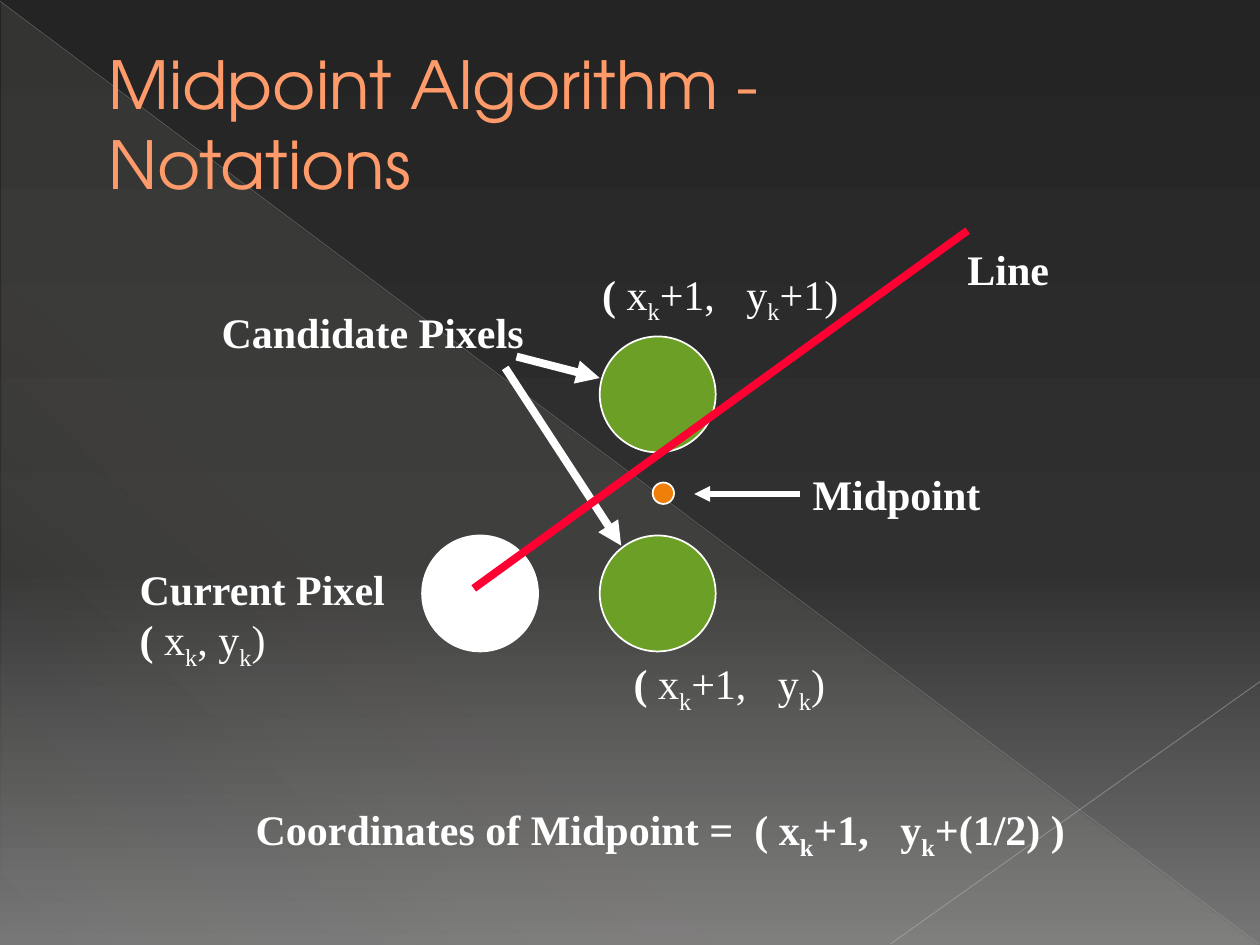
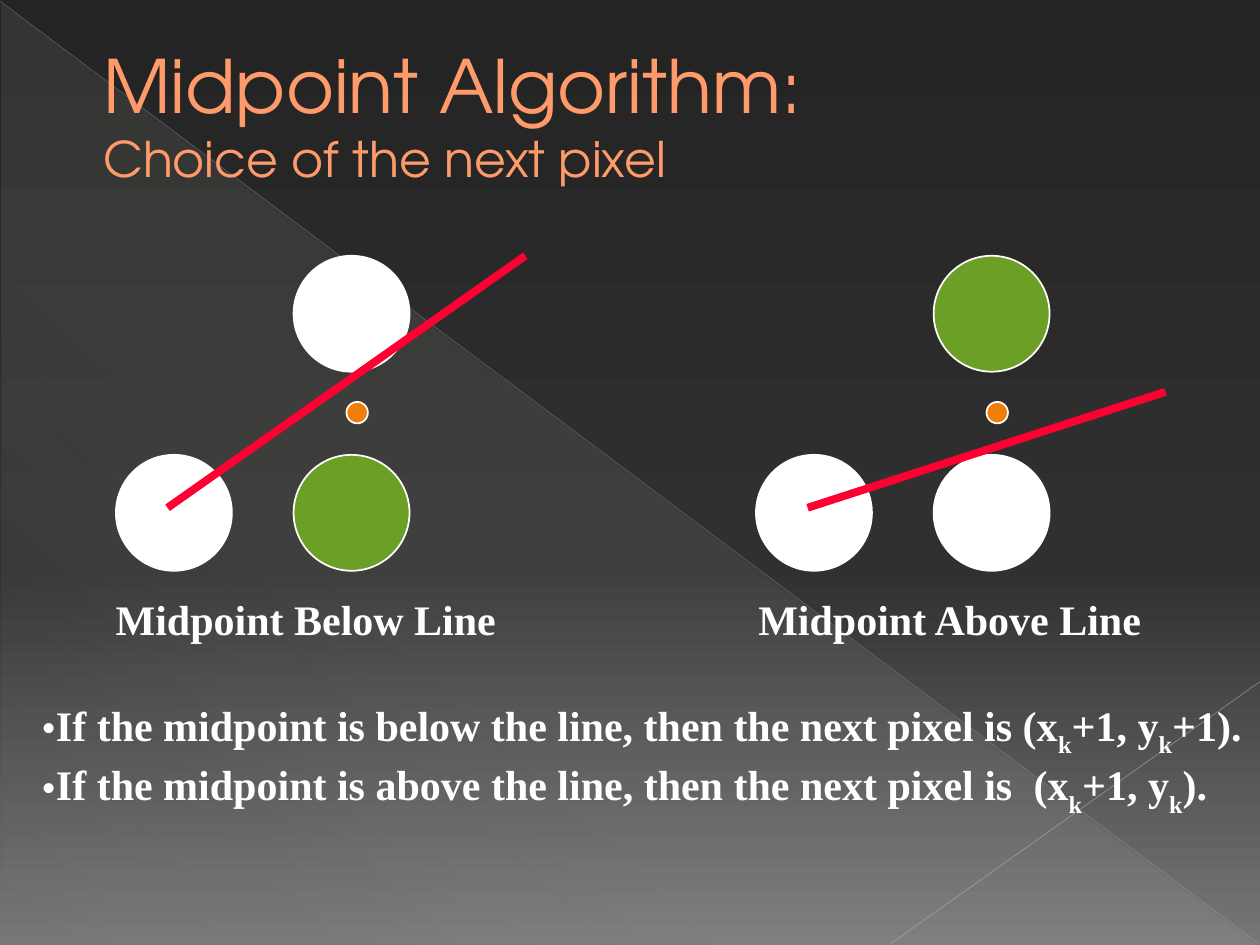
from dataclasses import dataclass
from typing import NamedTuple

from lxml import etree
from pptx import Presentation
from pptx import util as u
from pptx.dml.color import RGBColor
from pptx.enum import shapes, text
from pptx.oxml.ns import qn

WHITE, GREEN, ORANGE, RED = "FFFFFF", "6B9F25", "F07F09", "FF0033"
TITLE_COLOUR, TITLE_OUTLINE = "FF9B6A", "A65806"
BODY_FONT, TITLE_FONT = "Times New Roman", "TeX Gyre Adventor"
PIXEL_SIZE, MIDPOINT_SIZE = 0.92, 0.17
COLUMN_STEP, ROW_STEP = 1.41, 1.58


class Span(NamedTuple):
    text: str
    bold: bool = True
    size: float = 0
    gap: float = 0


class Label(NamedTuple):
    left: float
    top: float
    width: float
    height: float
    paragraphs: list


class Stroke(NamedTuple):
    start: tuple
    end: tuple
    colour: str
    width: float
    arrow: bool = False
    opacity: int = 100


class Stop(NamedTuple):
    position: int
    colour: str
    opacity: int = 100


@dataclass
class PixelDiagram:
    left: float
    top: float
    upper: str
    lower: str
    run: float
    rise: float


def colour(value: str) -> RGBColor:
    return RGBColor.from_string(value)


def add_xml(parent, tag: str, **attributes):
    names = {key: str(value) for key, value in attributes.items()}
    return etree.SubElement(parent, qn(tag), names)


def set_gradient(fill, element, stops: list, angle: int) -> None:
    fill.gradient()
    gradient = next(element.iter(qn("a:gradFill")))
    for child in list(gradient):
        gradient.remove(child)
    stop_list = add_xml(gradient, "a:gsLst")
    for stop in stops:
        mark = add_xml(stop_list, "a:gs", pos=stop.position * 1000)
        tint = add_xml(mark, "a:srgbClr", val=stop.colour)
        if stop.opacity < 100:
            add_xml(tint, "a:alpha", val=stop.opacity * 1000)
    add_xml(gradient, "a:lin", ang=angle * 60000, scaled=0)


def write(frame, paragraphs: list, *, font: str = BODY_FONT, size: float = 24,
          fill: str = WHITE, subscript: int = -25) -> None:
    for index, spans in enumerate(paragraphs):
        para = frame.add_paragraph() if index else frame.paragraphs[0]
        para.alignment = text.PP_ALIGN.LEFT
        for span in spans:
            if span.text == "\n":
                para.add_line_break()
                continue
            for part_index, part in enumerate(span.text.split("_k")):
                pieces = [("k", subscript)] if part_index else []
                for words, baseline in pieces + [(part, 0)]:
                    if not words:
                        continue
                    run = para.add_run()
                    run.text = words
                    run.font.name = font
                    run.font.size = u.Pt(span.size or size)
                    run.font.bold = span.bold
                    run.font.color.rgb = colour(fill)
                    properties = run._r.get_or_add_rPr()
                    if baseline:
                        properties.set("baseline", str(baseline * 1000))
                    if span.gap:
                        properties.set("spc", str(int(span.gap * 100)))


def add_label(canvas, label: Label, subscript: int = -25):
    box = canvas.add_textbox(*map(u.Inches, label[:4]))
    box.text_frame.word_wrap = False
    box.text_frame.auto_size = text.MSO_AUTO_SIZE.SHAPE_TO_FIT_TEXT
    write(box.text_frame, label.paragraphs, subscript=subscript)
    return box


def add_stroke(canvas, stroke: Stroke):
    points = map(u.Inches, stroke.start + stroke.end)
    line = canvas.add_connector(shapes.MSO_CONNECTOR.STRAIGHT, *points)
    line.line.color.rgb = colour(stroke.colour)
    line.line.width = u.Pt(stroke.width)
    outline = next(line.element.iter(qn("a:ln")))
    if stroke.opacity < 100:
        tint = next(outline.iter(qn("a:srgbClr")))
        add_xml(tint, "a:alpha", val=stroke.opacity * 1000)
    if stroke.arrow:
        add_xml(outline, "a:tailEnd", type="triangle")
    add_xml(outline.getparent(), "a:effectLst")
    return line


def add_circle(canvas, left: float, top: float, size: float, fill: str) -> None:
    place = map(u.Inches, (left, top, size, size))
    circle = canvas.add_shape(shapes.MSO_SHAPE.OVAL, *place)
    circle.shadow.inherit = False
    circle.fill.solid()
    circle.fill.fore_color.rgb = colour(fill)
    circle.line.color.rgb = colour(WHITE)
    circle.line.width = u.Pt(1)


def add_pixels(canvas, diagram: PixelDiagram) -> None:
    left, top = diagram.left, diagram.top
    next_left = left + COLUMN_STEP
    add_circle(canvas, left, top, PIXEL_SIZE, WHITE)
    add_circle(canvas, next_left, top, PIXEL_SIZE, diagram.lower)
    add_circle(canvas, next_left, top - ROW_STEP, PIXEL_SIZE, diagram.upper)
    start = (left + 0.41, top + 0.42)
    end = (start[0] + diagram.run, start[1] - diagram.rise)
    add_stroke(canvas, Stroke(start, end, RED, 4.5))
    add_circle(canvas, left + 1.83, top - 0.42, MIDPOINT_SIZE, ORANGE)


def add_title(slide, place: tuple, spans: list, size: float) -> None:
    title = slide.shapes.title
    title.left, title.top, title.width, title.height = map(u.Inches, place)
    frame = title.text_frame
    frame.word_wrap = True
    frame.auto_size = text.MSO_AUTO_SIZE.NONE
    frame.vertical_anchor = text.MSO_ANCHOR.MIDDLE
    write(frame, [spans], font=TITLE_FONT, size=size, fill=TITLE_COLOUR)
    for properties in title.element.iter(qn("a:pPr")):
        properties.set("marL", str(u.Inches(0.53)))
        properties.set("indent", "0")
    for properties in title.element.iter(qn("a:rPr")):
        outline = add_xml(properties, "a:ln", w=u.Pt(0.5))
        add_xml(add_xml(outline, "a:solidFill"), "a:srgbClr", val=TITLE_OUTLINE)
        properties.insert(0, outline)


def style_master(deck, slide) -> None:
    master = deck.slide_master
    set_gradient(master.background.fill, master.element,
                 [Stop(0, "242424"), Stop(60, "303030"), Stop(100, "767676")], 90)
    place = map(u.Inches, (0.01, 0.02, 9.98, 7.48))
    triangle = slide.shapes.add_shape(shapes.MSO_SHAPE.RIGHT_TRIANGLE, *place)
    triangle.shadow.inherit = False
    triangle.line.fill.background()
    set_gradient(triangle.fill, triangle.element,
                 [Stop(0, "E3DED1", 10), Stop(70, "E3DED1", 8), Stop(100, "E3DED1", 1)], 133)
    rays = [Stroke((0, 0.01), (9.99, 7.49), "B6B6B6", 0.39, opacity=35),
            Stroke((10, 5.41), (7.07, 7.49), "BFBFBF", 0.47, opacity=45)]
    decorations = [triangle] + [add_stroke(slide.shapes, ray) for ray in rays]
    for number, shape in enumerate(decorations, 101):
        next(shape.element.iter(qn("p:cNvPr"))).set("id", str(number))
        master.shapes.element.append(shape.element)


def build_notations(slide) -> None:
    add_title(slide, (0.23, 0.31, 7, 1.33),
              [Span("Midpoint Algorithm - Notations", False)], 37.8)
    canvas = slide.shapes.add_group_shape().shapes
    for arrow in [Stroke((4.01, 2.92), (4.93, 4.33), WHITE, 4.5, True),
                  Stroke((4.1, 2.83), (4.76, 3), WHITE, 4.5, True),
                  Stroke((6.35, 3.92), (5.51, 3.92), WHITE, 3, True)]:
        add_stroke(canvas, arrow)
    add_pixels(canvas, PixelDiagram(3.35, 4.25, GREEN, GREEN, 3.92, 2.84))
    bracket = Span("(")
    next_x = [bracket, Span(" x_k+1,", False), Span(" ", False, gap=12)]
    midpoint = [Span("Coordinates of Midpoint ="), Span(" ", gap=6), Span("( x_k+1,"),
                Span(" ", gap=12), Span("y_k+(1/2) )")]
    for label in [
        Label(1.66, 2.38, 2.62, 0.5, [[Span("Candidate Pixels")]]),
        Label(1.01, 4.42, 2.17, 0.9, [[Span("Current Pixel")],
                                      [bracket, Span(" x_k, y_k)", False)]]),
        Label(6.35, 3.67, 1.58, 0.5, [[Span("Midpoint")]]),
        Label(7.58, 1.88, 0.88, 0.5, [[Span("Line")]]),
        Label(1.93, 6.33, 6.68, 0.5, [midpoint]),
        Label(4.93, 5.17, 1.78, 0.5, [next_x + [Span("y_k)", False)]]),
        Label(4.68, 2.08, 2.12, 0.5, [next_x + [Span("y_k+1)", False)]]),
    ]:
        add_label(canvas, label)


def build_choice(slide) -> None:
    add_title(slide, (0.19, 0.25, 8.25, 1.31),
              [Span("Midpoint Algorithm:", False), Span("\n"),
               Span("Choice of the next pixel", False, 28)], 42)
    cases = [
        (PixelDiagram(0.92, 3.61, WHITE, GREEN, 2.84, 2),
         Label(0.82, 4.66, 3.24, 0.5, [[Span("Midpoint Below Line")]])),
        (PixelDiagram(6, 3.61, GREEN, WHITE, 2.84, 0.92),
         Label(5.92, 4.66, 3.28, 0.5, [[Span("Midpoint Above Line")]])),
    ]
    for diagram, caption in cases:
        canvas = slide.shapes.add_group_shape().shapes
        add_pixels(canvas, diagram)
        add_label(canvas, caption)
    rules = Label(0.23, 5.5, 9.76, 0.9, [
        [Span("If the midpoint is below the line, then the next pixel is (x_k+1, y_k+1).")],
        [Span("If the midpoint is above the line, then the next pixel is"),
         Span(" ", gap=6), Span("(x_k+1, y_k).")],
    ])
    box = add_label(slide.shapes, rules, subscript=-30)
    for properties in box.element.iter(qn("a:pPr")):
        add_xml(properties, "a:buFont", typeface=BODY_FONT)
        add_xml(properties, "a:buChar", char="•")


def main() -> None:
    deck = Presentation()
    deck.slide_width, deck.slide_height = u.Inches(10), u.Inches(7.5)
    title_only = deck.slide_layouts[5]
    notations, choice = (deck.slides.add_slide(title_only) for _ in range(2))
    style_master(deck, notations)
    build_notations(notations)
    build_choice(choice)
    deck.save("out.pptx")


if __name__ == "__main__":
    main()
